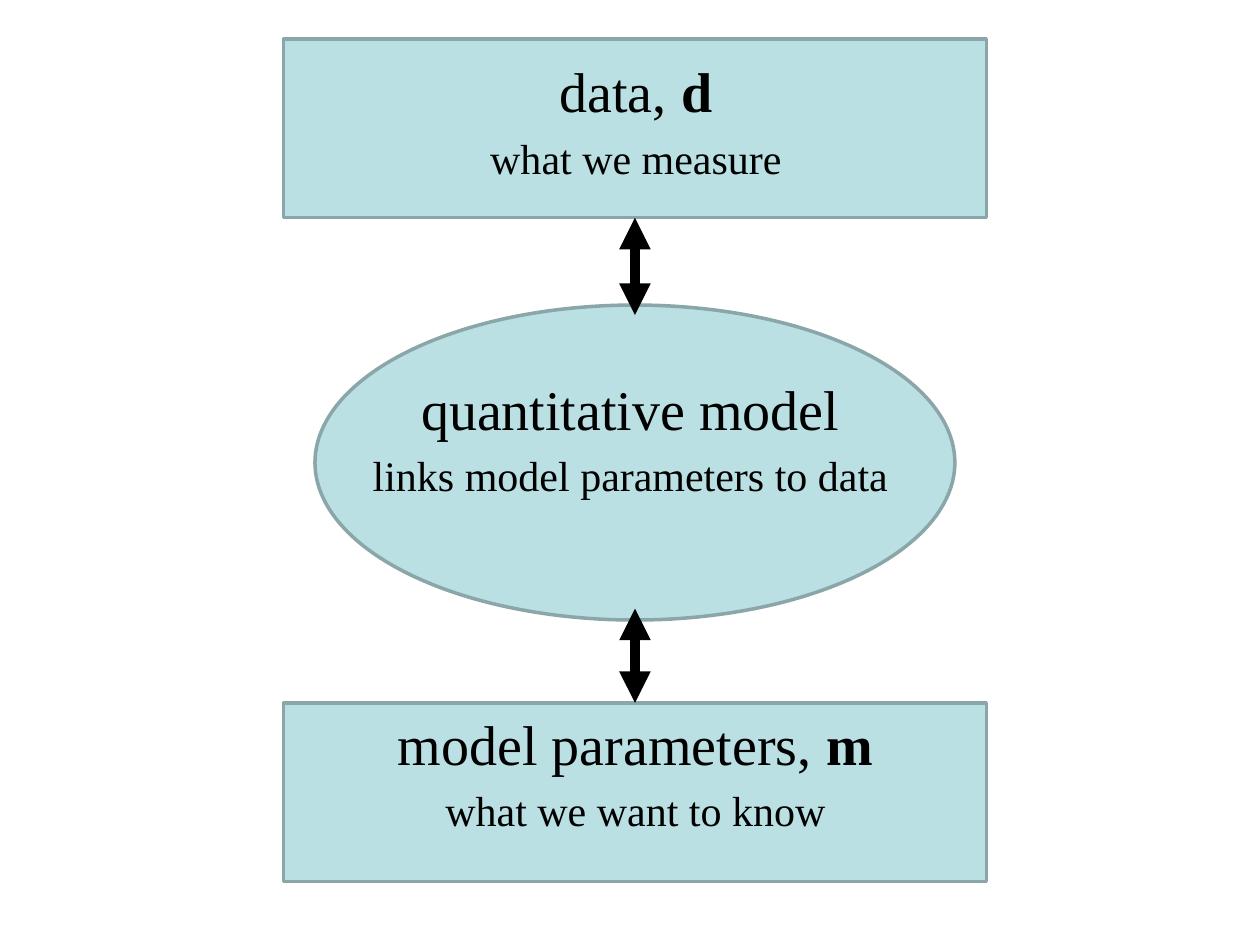
from lxml.etree import SubElement
from pptx import Presentation
from pptx.dml.color import RGBColor
from pptx.enum.shapes import MSO_CONNECTOR as Connector, MSO_SHAPE as Shape
from pptx.enum.text import MSO_ANCHOR as Anchor, MSO_AUTO_SIZE as AutoSize, PP_ALIGN as Align
from pptx.oxml.ns import qn
from pptx.util import Cm, Pt

PALE_TEAL = RGBColor(0xBB, 0xE0, 0xE3)
GREY_TEAL = RGBColor(0x8A, 0xA6, 0xA8)
BLACK = RGBColor(0, 0, 0)
CENTRE = 12.8
FRAME_FORMAT = {"word_wrap": True, "auto_size": AutoSize.NONE, "vertical_anchor": Anchor.TOP}
HEADING_FORMAT = {"name": "Times New Roman", "size": Pt(32), "bold": False}
DETAIL_FORMAT = {**HEADING_FORMAT, "size": Pt(24)}


def set_attributes(target, values):
    """Set every attribute in a dict of format values."""
    for name, value in values.items():
        setattr(target, name, value)


def add_node(slide, kind, top, width, height):
    """Add a filled shape centred on the diagram axis."""
    shape = slide.shapes.add_shape(
        kind, Cm(CENTRE - width / 2), Cm(top), Cm(width), Cm(height))
    shape.shadow.inherit = False
    shape.fill.solid()
    shape.fill.fore_color.rgb = PALE_TEAL
    shape.line.color.rgb = GREY_TEAL
    shape.line.width = Pt(2)
    return shape


def add_run(paragraph, text, values):
    """Add a black run with the given font values."""
    run = paragraph.add_run()
    run.text = text
    set_attributes(run.font, values)
    run.font.color.rgb = BLACK


def format_paragraph(paragraph):
    """Centre a paragraph with a hanging indent, relative spacing and no bullet."""
    paragraph.alignment = Align.CENTER
    properties = paragraph._p.get_or_add_pPr()
    properties.set("marL", str(Cm(0.95)))
    properties.set("indent", str(-Cm(0.95)))
    spacing = SubElement(properties, qn("a:spcBef"))
    SubElement(spacing, qn("a:spcPct")).set("val", "20000")
    SubElement(properties, qn("a:buNone"))


def write_label(shape, heading, symbol, detail):
    """Write a heading with an optional bold symbol above a detail line."""
    frame = shape.text_frame
    set_attributes(frame, FRAME_FORMAT)
    first, second = frame.paragraphs[0], frame.add_paragraph()
    for paragraph in (first, second):
        format_paragraph(paragraph)
    add_run(first, heading, HEADING_FORMAT)
    if symbol:
        add_run(first, symbol, {**HEADING_FORMAT, "bold": True})
    add_run(second, detail, DETAIL_FORMAT)


def add_label(slide, box, *texts):
    """Add a text box holding a label."""
    write_label(slide.shapes.add_textbox(*map(Cm, box)), *texts)


def place_body_label(slide, box, *texts):
    """Move the body placeholder in front of the nodes and write a label in it."""
    body = slide.placeholders[1]
    set_attributes(body, dict(zip(("left", "top", "width", "height"), map(Cm, box))))
    slide.shapes._spTree.append(body._element)
    write_label(body, *texts)


def add_double_arrow(slide, top, bottom):
    """Add a thick vertical connector with a triangle at both ends."""
    arrow = slide.shapes.add_connector(
        Connector.STRAIGHT, Cm(CENTRE), Cm(top), Cm(CENTRE), Cm(bottom))
    arrow.line.color.rgb = BLACK
    arrow.line.width = Pt(6)
    for end in ("a:headEnd", "a:tailEnd"):
        SubElement(arrow.line._ln, qn(end)).set("type", "triangle")
    SubElement(arrow._element.spPr, qn("a:effectLst"))
    return arrow


def main():
    """Build the slide that links data, model and parameters."""
    presentation = Presentation()
    set_attributes(presentation, {"slide_width": Cm(25.4), "slide_height": Cm(19.05)})
    slide = presentation.slides.add_slide(presentation.slide_layouts[1])
    title = slide.shapes.title._element
    title.getparent().remove(title)

    add_node(slide, Shape.OVAL, 6.15, 12.9, 6.35)
    parameters = add_node(slide, Shape.RECTANGLE, 14.17, 14.17, 3.6)
    data = add_node(slide, Shape.RECTANGLE, 0.79, 14.17, 3.6)

    place_body_label(slide, (7.42, 1.02, 10.8, 3.81), "data, ", "d", "what we measure")
    add_label(slide, (6.88, 14.17, 11.86, 3.38),
              "model parameters, ", "m", "what we want to know")
    add_label(slide, (6.78, 7.42, 11.86, 3.33),
              "quantitative model", "", "links model parameters to data")

    add_double_arrow(slide, 4.45, 6.35).begin_connect(data, 2)
    add_double_arrow(slide, 12.27, 14.17).end_connect(parameters, 0)
    presentation.save("out.pptx")


if __name__ == "__main__":
    main()
